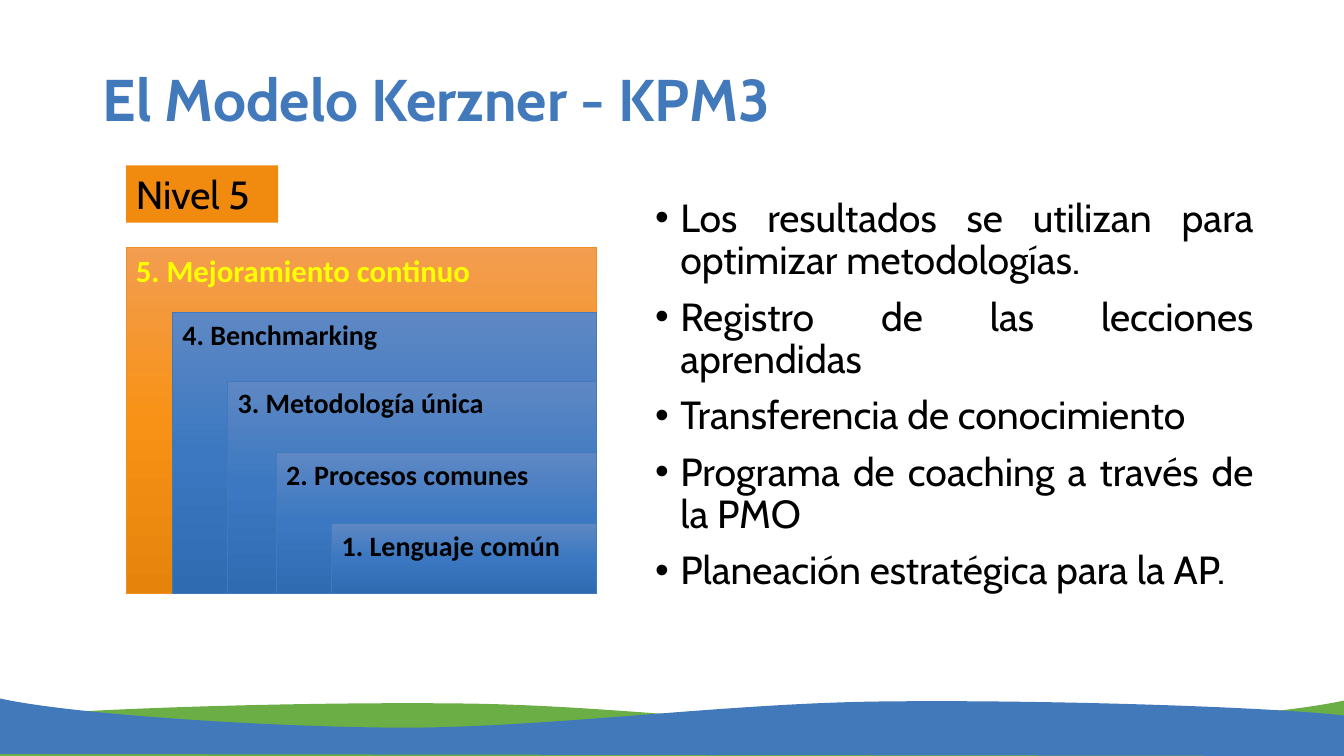
import copy

import pptx
import pptx.dml.color
import pptx.enum.shapes
import pptx.enum.text
import pptx.oxml
import pptx.oxml.ns
import pptx.oxml.xmlchemy
import pptx.util

WIDTH, HEIGHT = 13.33, 7.5
COLORS = {
    "blue": "4279BB", "green": "6BAE45", "orange": "F08B10",
    "black": "000000", "yellow": "FFFF00",
    "blue line": "4179BB", "orange line": "EE9120",
}
GRADIENTS = {
    "blue": ("5E88C4", "3B78C1", "2F6BB1"),
    "orange": ("F29D50", "F89216", "E5830B"),
}
ALIGN = pptx.enum.text.PP_ALIGN
ANCHOR = pptx.enum.text.MSO_ANCHOR

TITLE = {"name": "Cabin", "size": pptx.util.Pt(42), "bold": True}
BODY = {"name": "Cabin", "size": pptx.util.Pt(28), "bold": False}
TOP_LEVEL = {"name": "Calibri", "size": pptx.util.Pt(22), "bold": True}
LEVEL = {"name": "Calibri", "size": pptx.util.Pt(20), "bold": True}

LEVELS = [
    ("5. Mejoramiento continuo", 0, 0),
    ("4. Benchmarking", 0.46, 0.65),
    ("3. Metodología única", 1.01, 1.33),
    ("2. Procesos comunes", 1.49, 2.04),
    ("1. Lenguaje común", 2.04, 2.74),
]
RESULTS = [
    "Los resultados se utilizan para optimizar metodologías.",
    "Registro de las lecciones aprendidas",
    "Transferencia de conocimiento",
    "Programa de coaching a través de la PMO",
    "Planeación estratégica para la AP.",
]
WAVE = [
    (-0.01, 7.12),
    (0.76, 7.03), (3.06, 6.96), (4.62, 6.98),
    (6.18, 7), (7.89, 7.24), (9.35, 7.24),
    (10.8, 7.23), (12.65, 7.1), (13.33, 6.95),
    (13.33, 7.19), (13.33, 7.27), (13.34, 7.5),
    (0, 7.52),
    (-0.01, 7.27), (-0.01, 7.26), (-0.01, 7.12),
]
CURVE_STARTS = (0, 3, 6, 9, 13)


def color_of(name):
    """Return the named colour."""
    return pptx.dml.color.RGBColor.from_string(COLORS[name])


def inches(values):
    """Convert a series of numbers to lengths in inches."""
    return [pptx.util.Inches(value) for value in values]


def write(paragraph, text, font, color, **layout):
    """Write one formatted run and set the paragraph's layout."""
    run = paragraph.add_run()
    run.text = text
    for name, value in font.items():
        setattr(run.font, name, value)
    run.font.color.rgb = color_of(color)
    for name, value in layout.items():
        setattr(paragraph, name, value)


def add_block(slide, box, text, font, color):
    """Add a rectangle with left-aligned text at its top."""
    shape = slide.shapes.add_shape(
        pptx.enum.shapes.MSO_SHAPE.RECTANGLE, *inches(box))
    shape.shadow.inherit = False
    shape.text_frame.word_wrap = True
    shape.text_frame.vertical_anchor = ANCHOR.TOP
    write(shape.text_frame.paragraphs[0], text, font, color,
          alignment=ALIGN.LEFT)
    return shape


def fill_gradient(shape, colors):
    """Fill a shape from top to bottom with evenly spaced colours."""
    shape.fill.gradient()
    shape.fill.gradient_angle = 270
    stops = shape._element.spPr.find(".//" + pptx.oxml.ns.qn("a:gsLst"))
    stops.append(copy.deepcopy(stops[-1]))
    for index, (stop, color) in enumerate(zip(shape.fill.gradient_stops, colors)):
        stop.position = index / (len(colors) - 1)
        stop.color.rgb = pptx.dml.color.RGBColor.from_string(color)


def bend(shape, starts):
    """Turn each three straight segments after a start into one cubic curve."""
    lines = list(shape._element.iter(pptx.oxml.ns.qn("a:lnTo")))
    for start in starts:
        curve = pptx.oxml.xmlchemy.OxmlElement("a:cubicBezTo")
        lines[start].addprevious(curve)
        for line in lines[start:start + 3]:
            curve.append(line[0])
            line.getparent().remove(line)


def add_waves(slide):
    """Draw the green wave and its mirrored blue wave at the foot."""
    mirrored = [(WIDTH - x, y - 0.02) for x, y in WAVE]
    for color, outline in (("green", WAVE), ("blue", mirrored)):
        points = [inches(point) for point in outline]
        builder = slide.shapes.build_freeform(*points[0])
        builder.add_line_segments(points[1:], close=True)
        wave = builder.convert_to_shape()
        bend(wave, CURVE_STARTS)
        wave.shadow.inherit = False
        wave.fill.solid()
        wave.fill.fore_color.rgb = color_of(color)
        wave.line.fill.background()


def add_title(slide, box, text):
    """Place and format the title placeholder."""
    title = slide.shapes.title
    for name, value in zip(("left", "top", "width", "height"), inches(box)):
        setattr(title, name, value)
    title.text_frame.auto_size = pptx.enum.text.MSO_AUTO_SIZE.NONE
    title.text_frame.vertical_anchor = ANCHOR.MIDDLE
    write(title.text_frame.paragraphs[0], text, TITLE, "blue",
          alignment=ALIGN.LEFT, line_spacing=0.9)


def add_badge(slide, box, text):
    """Add the flat label that names the level."""
    badge = add_block(slide, box, text, BODY, "black")
    badge.fill.solid()
    badge.fill.fore_color.rgb = color_of("orange")
    badge.line.fill.background()


def add_levels(slide, box):
    """Nest the maturity levels in the lower right corner of the box."""
    left, top, width, height = box
    for index, (text, across, down) in enumerate(LEVELS):
        level_box = (left + across, top + down, width - across, height - down)
        theme, font, color = (("blue", LEVEL, "black") if index
                              else ("orange", TOP_LEVEL, "yellow"))
        block = add_block(slide, level_box, text, font, color)
        fill_gradient(block, GRADIENTS[theme])
        block.line.color.rgb = color_of(theme + " line")
        block.line.width = pptx.util.Pt(0.5)


def add_results(slide, box):
    """List the results as justified bullets."""
    frame = slide.shapes.add_textbox(*inches(box)).text_frame
    frame.word_wrap = True
    for index, text in enumerate(RESULTS):
        paragraph = frame.add_paragraph() if index else frame.paragraphs[0]
        write(paragraph, text, BODY, "black", alignment=ALIGN.JUSTIFY,
              line_spacing=0.9, space_before=pptx.util.Pt(10))
        properties = paragraph._p.get_or_add_pPr()
        indent = pptx.util.Inches(0.25)
        properties.set("marL", str(indent))
        properties.set("indent", str(-indent))
        for tag, name, value in (("a:buFont", "typeface", "Arial"),
                                 ("a:buChar", "char", "•")):
            bullet = pptx.oxml.xmlchemy.OxmlElement(tag)
            bullet.set(name, value)
            properties.append(bullet)


def main():
    """Build the slide and save it."""
    presentation = pptx.Presentation()
    presentation.slide_width, presentation.slide_height = inches((WIDTH, HEIGHT))
    slide = presentation.slides.add_slide(presentation.slide_layouts[5])
    add_waves(slide)
    add_title(slide, (0.92, 0.29, 11.5, 1.45), "El Modelo Kerzner - KPM3")
    add_results(slide, (6.4, 1.92, 6.13, 4.89))
    add_badge(slide, (1.25, 1.64, 1.51, 0.57), "Nivel 5")
    add_levels(slide, (1.25, 2.45, 4.67, 3.44))
    presentation.save("out.pptx")


if __name__ == "__main__":
    main()
